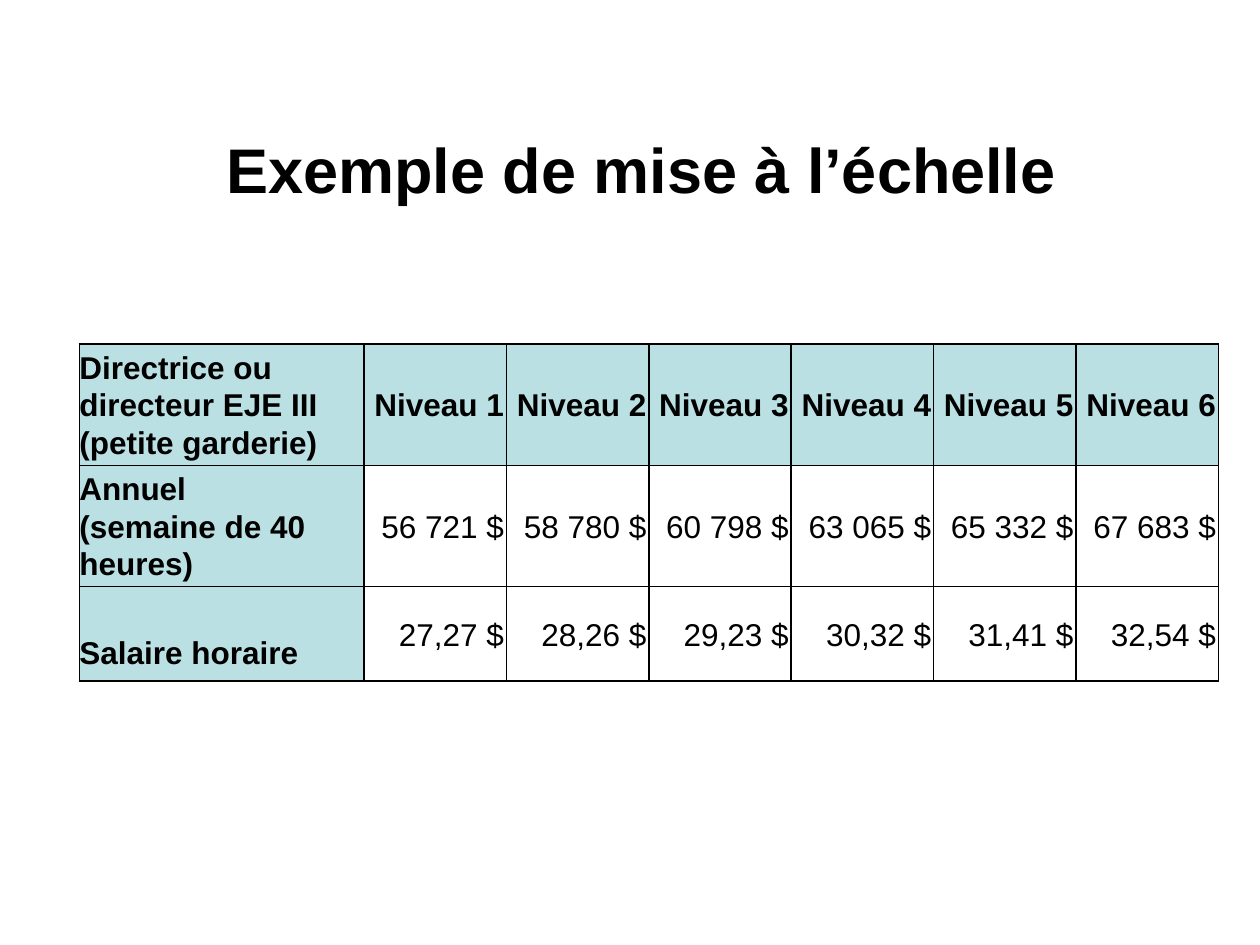
from lxml.etree import SubElement
from pptx import Presentation
from pptx.dml.color import RGBColor
from pptx.enum.text import MSO_ANCHOR, PP_ALIGN
from pptx.oxml.ns import qn
from pptx.util import Inches, Pt

HUES = {"ink": "000000", "head": "BBE0E3", "body": "FFFFFF"}
UNIT = 1.13  # width of a level column; the label column spans two
TALL = [0.96, 0.96, 0.75]
LINE = 0.3
ROWS = [
    ["Directrice ou directeur EJE III (petite garderie)"]
    + [f"Niveau {n}" for n in range(1, 7)],
    ["Annuel\n(semaine de 40 heures)",
     "56 721 $", "58 780 $", "60 798 $", "63 065 $", "65 332 $", "67 683 $"],
    ["Salaire horaire",
     "27,27 $", "28,26 $", "29,23 $", "30,32 $", "31,41 $", "32,54 $"],
]


def write(frame, text, size=18, bold=False, align=PP_ALIGN.LEFT, space=1.0):
    frame.word_wrap = True
    frame.text = text
    for para in frame.paragraphs:
        para.alignment = align
        para.line_spacing = space
        for run in para.runs:
            font = run.font
            font.name, font.size, font.bold = "Arial", Pt(size), bold
            font.color.rgb = RGBColor.from_string(HUES["ink"])


def edge(cell):
    """Draw a thin line on all four sides of a cell."""
    props = cell._tc.get_or_add_tcPr()
    for side in ("lnL", "lnR", "lnT", "lnB"):
        line = SubElement(props, qn(f"a:{side}"), w=str(Pt(1)))
        fill = SubElement(line, qn("a:solidFill"))
        SubElement(fill, qn("a:srgbClr"), val=HUES["ink"])


deck = Presentation()
deck.slide_width, deck.slide_height = Inches(10), Inches(7.5)
slide = deck.slides.add_slide(deck.slide_layouts[6])

title = slide.shapes.add_textbox(
    Inches(0.7), Inches(0.71), Inches(8.78), Inches(1.25))
title.text_frame.vertical_anchor = MSO_ANCHOR.MIDDLE
write(title.text_frame, "Exemple de mise à l’échelle",
      size=36, bold=True, align=PP_ALIGN.CENTER)

grid = slide.shapes.add_table(
    len(ROWS), len(ROWS[0]), Inches(0.63), Inches(2.73),
    Inches(8 * UNIT), Inches(sum(TALL))).table
for c, col in enumerate(grid.columns):
    col.width = Inches(UNIT if c else 2 * UNIT)

for r, row in enumerate(ROWS):
    grid.rows[r].height = Inches(TALL[r])
    for c, text in enumerate(row):
        cell = grid.cell(r, c)
        head = r == 0 or c == 0
        cell.margin_left = cell.margin_bottom = 0
        cell.margin_right = Inches(0.02 if c else 0)
        # The last label sits one line lower than its row's values
        cell.margin_top = Inches(LINE if (r, c) == (2, 0) else 0)
        cell.vertical_anchor = MSO_ANCHOR.MIDDLE
        edge(cell)
        cell.fill.solid()
        cell.fill.fore_color.rgb = RGBColor.from_string(
            HUES["head" if head else "body"])
        write(cell.text_frame, text, bold=head, space=1.07,
              align=PP_ALIGN.RIGHT if c else PP_ALIGN.LEFT)

deck.save("out.pptx")
